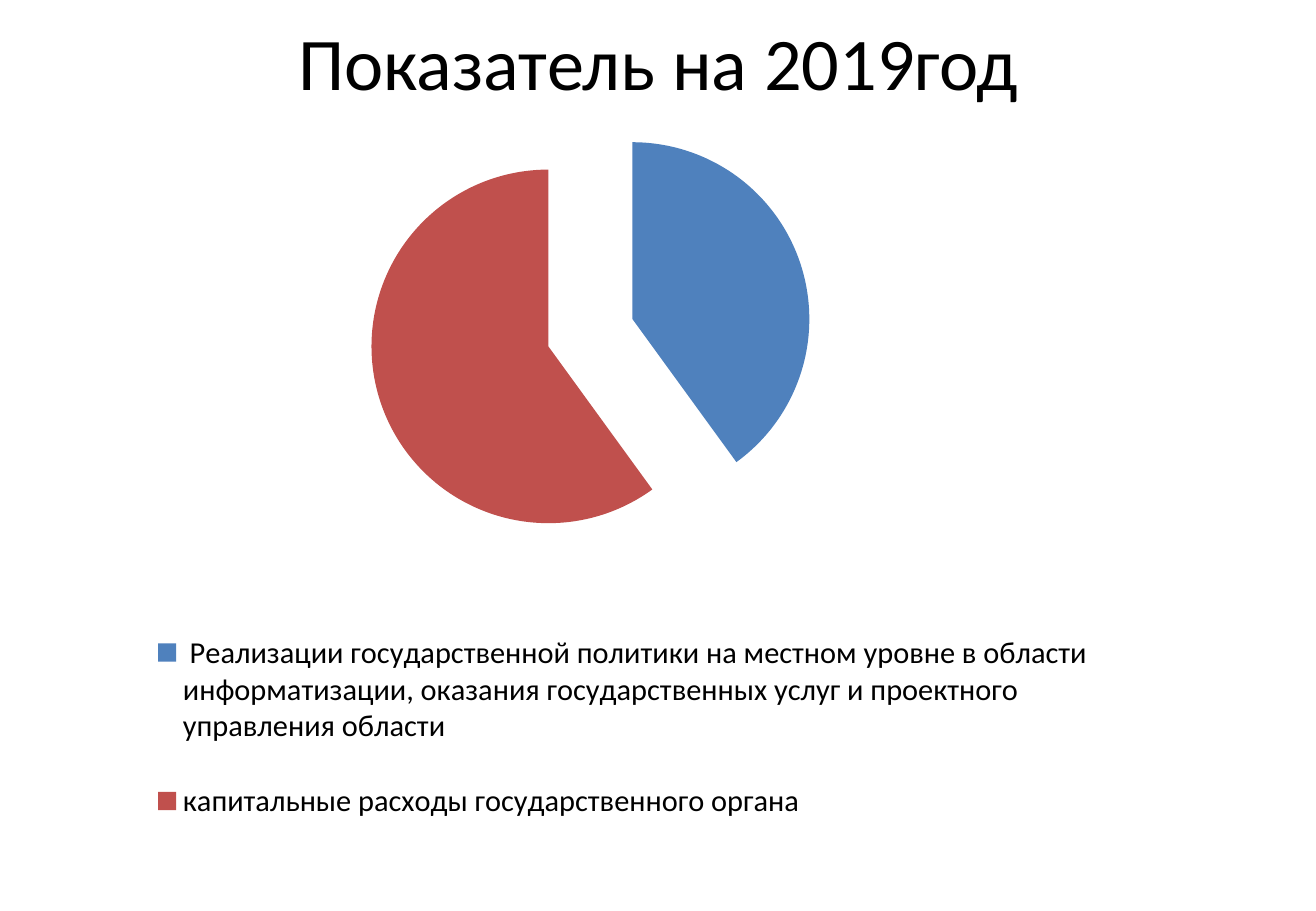
from lxml import etree
from pptx import Presentation
from pptx.chart.data import CategoryChartData
from pptx.dml.color import RGBColor
from pptx.enum import chart as ch, text as tx
from pptx.oxml.ns import qn
from pptx.util import Inches, Pt

# Content
TITLE = "Показатель на 2019год"
SHARES = [
    (" Реализации государственной политики на местном уровне в области "
     "информатизации, оказания государственных услуг и проектного "
     "управления области", 40, "blue"),
    ("капитальные расходы государственного органа", 60, "red"),
]
COLORS = {"ink": "000000", "blue": "4F81BD", "red": "C0504D"}
FONT = "Calibri"
EXPLODE = 25
PLOT = {"x": 0.034, "y": 0, "w": 0.883, "h": 0.575}
LEGEND = {"x": 0.06, "y": 0.63, "w": 0.89, "h": 0.34}


def color(name):
    return RGBColor.from_string(COLORS[name])


def style(font, size, ink="ink"):
    font.name = FONT
    font.size = Pt(size)
    font.color.rgb = color(ink)


def add_text(slide, words, box, size, align=tx.PP_ALIGN.CENTER):
    frame = slide.shapes.add_textbox(*map(Inches, box)).text_frame
    frame.word_wrap = True
    frame.vertical_anchor = tx.MSO_ANCHOR.MIDDLE
    par = frame.paragraphs[0]
    par.alignment = align
    run = par.add_run()
    run.text = words
    style(run.font, size)


def set_layout(parent, before, area, inner=False):
    """Place a chart part by fractions of the chart area."""
    for old in parent.findall(qn("c:layout")):
        parent.remove(old)
    layout = etree.Element(qn("c:layout"))
    manual = etree.SubElement(layout, qn("c:manualLayout"))
    rules = [("layoutTarget", "inner")] if inner else []
    rules += [("xMode", "edge"), ("yMode", "edge"), *area.items()]
    for tag, val in rules:
        etree.SubElement(manual, qn("c:" + tag)).set("val", str(val))
    if before is None:
        parent.insert(0, layout)
    else:
        parent.find(qn(before)).addprevious(layout)


def add_pie(slide, box):
    data = CategoryChartData()
    data.categories = [name for name, _, _ in SHARES]
    data.add_series("Series 1", [val for _, val, _ in SHARES])
    chart = slide.shapes.add_chart(
        ch.XL_CHART_TYPE.PIE, *map(Inches, box), data).chart
    chart.has_title = False
    style(chart.font, 18)

    # Slices
    plot = chart.plots[0]
    plot.vary_by_categories = True
    series = plot.series[0]
    for i, (_, _, hue) in enumerate(SHARES):
        fill = series.points[i].format.fill
        fill.solid()
        fill.fore_color.rgb = color(hue)
    burst = etree.Element(qn("c:explosion"))
    burst.set("val", str(EXPLODE))
    series._element.find(qn("c:dPt")).addprevious(burst)
    set_layout(plot._element.getparent(), None, PLOT, inner=True)

    # Legend
    chart.has_legend = True
    legend = chart.legend
    legend.position = ch.XL_LEGEND_POSITION.BOTTOM
    legend.include_in_layout = True
    style(legend.font, 18)
    set_layout(legend._element, "c:overlay", LEGEND)


def main():
    deck = Presentation()
    deck.slide_width, deck.slide_height = Inches(10.83), Inches(7.5)
    slide = deck.slides.add_slide(deck.slide_layouts[6])
    add_text(slide, TITLE, (0.92, 0, 9, 1), 44)
    add_pie(slide, (0.58, 0.92, 9, 6.33))
    deck.save("out.pptx")


if __name__ == "__main__":
    main()
